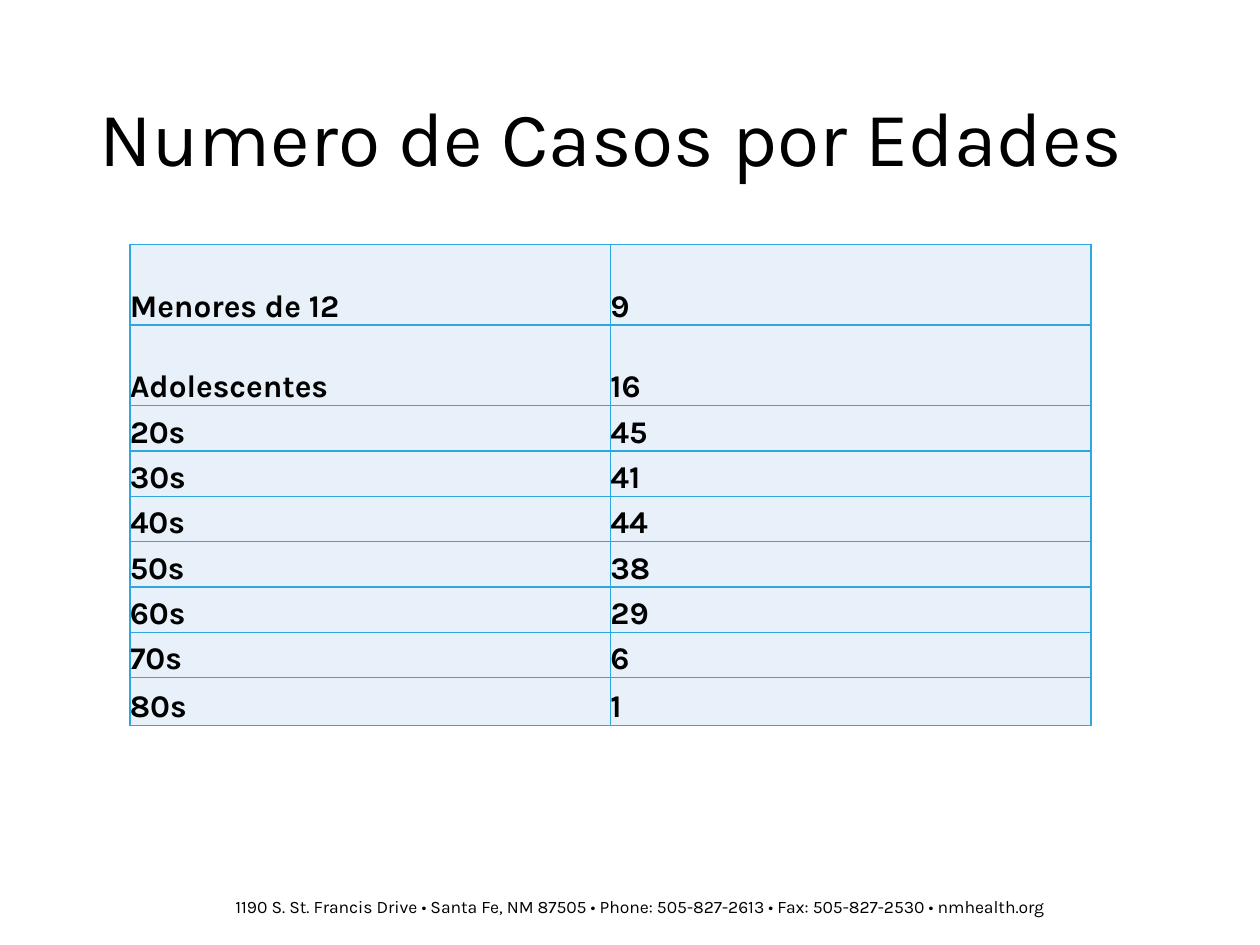
import pptx
import pptx.dml.color
import pptx.enum.text
import pptx.oxml.ns
import pptx.util
import lxml.etree

Inches = pptx.util.Inches
Anchor = pptx.enum.text.MSO_ANCHOR
Align = pptx.enum.text.PP_ALIGN
AutoSize = pptx.enum.text.MSO_AUTO_SIZE

FONT = "Karla"
INK = "000000"
CELL_FILL = "E8F1F9"
BORDER = "2FA6DE"

CASES = [
    ("Menores de 12", "9"),
    ("Adolescentes", "16"),
    ("20s", "45"),
    ("30s", "41"),
    ("40s", "44"),
    ("50s", "38"),
    ("60s", "29"),
    ("70s", "6"),
    ("80s", "1"),
]
ROW_HEIGHTS = [0.64] * 2 + [0.36] * 6 + [0.38]
CONTACT = (
    "1190 S. St. Francis Drive • Santa Fe, NM 87505 • Phone: 505-827-2613"
    " • Fax: 505-827-2530 • nmhealth.org"
)


def color(hex_text):
    """Turn a hex string into a colour."""
    return pptx.dml.color.RGBColor.from_string(hex_text)


def write_text(frame, text, size, bold=False, line_spacing=None):
    """Write one left-aligned paragraph into a text frame."""
    para = frame.paragraphs[0]
    para.alignment = Align.LEFT
    if line_spacing:
        para.line_spacing = line_spacing
    span = para.add_run()
    span.text = text
    span.font.name = FONT
    span.font.size = pptx.util.Pt(size)
    span.font.bold = bold
    span.font.color.rgb = color(INK)


def place(shape, left, top, width, height):
    """Move a shape into the given box."""
    shape.left, shape.top, shape.width, shape.height = left, top, width, height


def add_title(page, left, top, width, height):
    """Fill the title placeholder."""
    title = page.shapes.title
    place(title, left, top, width, height)
    frame = title.text_frame
    frame.auto_size = AutoSize.NONE
    frame.word_wrap = True
    frame.vertical_anchor = Anchor.MIDDLE
    write_text(frame, "Numero de Casos por Edades", size=44, line_spacing=0.9)


def add_borders(cell, hex_text, points):
    """Draw a solid line on all four sides of a cell."""
    qn = pptx.oxml.ns.qn
    properties = cell._tc.get_or_add_tcPr()
    for side in ("lnL", "lnR", "lnT", "lnB"):
        line = lxml.etree.SubElement(
            properties, qn("a:" + side), w=str(pptx.util.Pt(points))
        )
        fill = lxml.etree.SubElement(line, qn("a:solidFill"))
        lxml.etree.SubElement(fill, qn("a:srgbClr"), val=hex_text)


def format_cell(cell, text):
    """Write and style one table cell."""
    cell.margin_left = cell.margin_right = 0
    cell.margin_top = cell.margin_bottom = 0
    cell.vertical_anchor = Anchor.BOTTOM
    add_borders(cell, BORDER, 1)
    cell.fill.solid()
    cell.fill.fore_color.rgb = color(CELL_FILL)
    write_text(cell.text_frame, text, size=18, bold=True)


def add_cases_table(page, left, top, width, height):
    """Build the table of cases by age."""
    table = page.shapes.add_table(
        len(CASES), len(CASES[0]), left, top, width, height
    ).table
    table.first_row = False
    table.horz_banding = False
    for row, row_height, values in zip(table.rows, ROW_HEIGHTS, CASES):
        row.height = Inches(row_height)
        for cell, text in zip(row.cells, values):
            format_cell(cell, text)


def add_contact_line(page, left, top, width, height):
    """Add the address line at the foot of the page."""
    frame = page.shapes.add_textbox(left, top, width, height).text_frame
    frame.word_wrap = True
    frame.auto_size = AutoSize.SHAPE_TO_FIT_TEXT
    write_text(frame, CONTACT, size=10)


def main():
    """Build and save the deck."""
    deck = pptx.Presentation()
    deck.slide_width, deck.slide_height = Inches(10), Inches(7.5)
    page = deck.slides.add_slide(deck.slide_layouts.get_by_name("Title Only"))
    add_contact_line(page, Inches(1.77), Inches(7.06), Inches(8.2), Inches(0.27))
    add_title(page, Inches(0.69), Inches(0.4), Inches(8.62), Inches(1.45))
    add_cases_table(page, Inches(1.03), Inches(1.94), Inches(7.63), Inches(3.82))
    deck.save("out.pptx")


if __name__ == "__main__":
    main()
